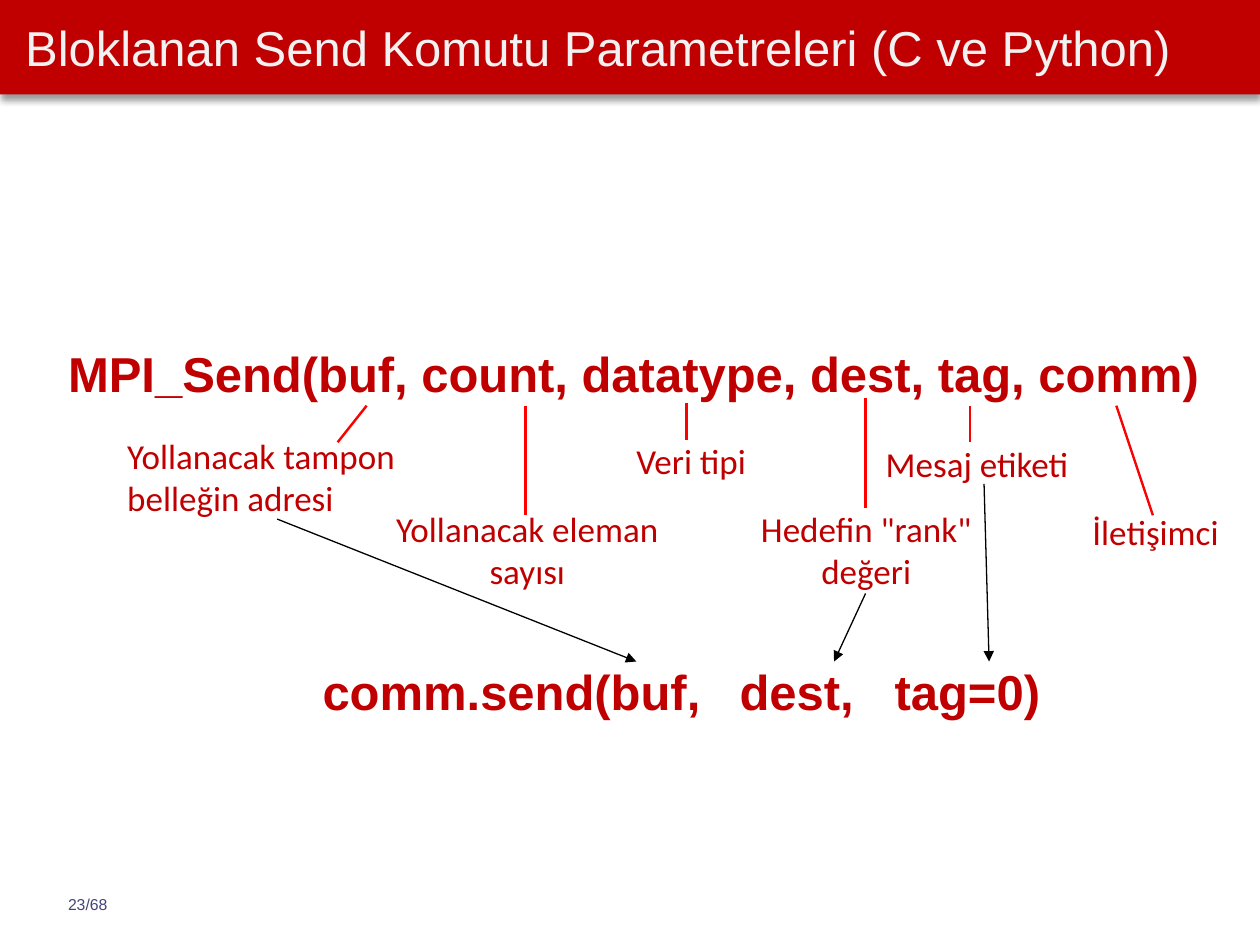
"""Build the slide on the parameters of the blocking send command."""
from dataclasses import dataclass

from lxml import etree
from pptx import Presentation
from pptx import util as u
from pptx.dml.color import RGBColor
from pptx.enum import shapes, text
from pptx.oxml import ns


@dataclass(frozen=True)
class Theme:
    """Colours, fonts and type sizes of the slide."""

    red: str = "C00000"
    pointer: str = "FF0000"
    arrow: str = "000000"
    title: str = "F2F2F2"
    page: str = "444479"
    sans: str = "Arial"
    label: str = "Calibri"
    code_size: float = 28
    label_size: float = 20
    page_size: float = 9


THEME = Theme()
LEFT, CENTER = text.PP_ALIGN.LEFT, text.PP_ALIGN.CENTER

LABELS = [
    ("Yollanacak tampon\vbelleğin adresi", (1.01, 3.45, 2.39, 0.67), LEFT),
    ("Yollanacak eleman\vsayısı", (3, 4.03, 2.37, 0.67), CENTER),
    ("Veri tipi", (5.05, 3.49, 0.94, 0.34), LEFT),
    ('Hedefin "rank"\vdeğeri', (5.98, 4.03, 1.79, 0.67), CENTER),
    ("Mesaj etiketi", (7.03, 3.51, 1.56, 0.34), LEFT),
    ("İletişimci", (8.67, 4.05, 1.08, 0.34), LEFT),
]
POINTERS = [
    (2.91, 3.22, 2.68, 3.51),
    (4.17, 3.22, 4.17, 4.09),
    (5.45, 3.2, 5.45, 3.49),
    (7.7, 3.22, 7.7, 3.51),
    (6.87, 3.16, 6.87, 4.03),
    (8.86, 3.22, 9.15, 4.09),
]
ARROWS = [
    (2.2, 4.12, 5.05, 5.25),
    (6.87, 4.71, 6.62, 5.25),
    (7.81, 3.84, 7.85, 5.25),
]


def add_child(parent, tag, **attributes):
    """Append a DrawingML element with the given attributes."""
    child = etree.SubElement(parent, ns.qn(tag))
    for key, value in attributes.items():
        child.set(key, str(value))
    return child


def write(frame, wording, font, size, color, bold=False, align=LEFT):
    """Fill a text frame with one formatted paragraph."""
    frame.word_wrap = True
    frame.auto_size = text.MSO_AUTO_SIZE.NONE
    frame.margin_left = frame.margin_right = 0
    frame.margin_top = frame.margin_bottom = 0
    paragraph = frame.paragraphs[0]
    paragraph.text = wording
    paragraph.alignment = align
    paragraph.font.name = font
    paragraph.font.size = u.Pt(size)
    paragraph.font.bold = bold
    paragraph.font.color.rgb = RGBColor.from_string(color)
    return paragraph


def add_text(slide, wording, place, *style, **options):
    """Add a text box and return its paragraph."""
    box = slide.shapes.add_textbox(*map(u.Inches, place))
    return write(box.text_frame, wording, *style, **options)


def add_code(slide, wording, place, tab_stops=()):
    """Add a bold line of code with optional tab stops."""
    paragraph = add_text(slide, wording, place, THEME.sans, THEME.code_size,
                         THEME.red, bold=True)
    if tab_stops:
        stops = etree.Element(ns.qn("a:tabLst"))
        for stop in tab_stops:
            add_child(stops, "a:tab", pos=u.Inches(stop), algn="l")
        paragraph._p.get_or_add_pPr().insert(0, stops)


def add_line(slide, ends, color, width, arrowhead=False):
    """Draw a straight line, with a triangle at its end if asked."""
    line = slide.shapes.add_connector(shapes.MSO_CONNECTOR.STRAIGHT,
                                      *map(u.Inches, ends))
    line.line.color.rgb = RGBColor.from_string(color)
    line.line.width = u.Pt(width)
    properties = line._element.spPr
    if arrowhead:
        add_child(properties.find(ns.qn("a:ln")), "a:tailEnd", type="triangle")
    add_child(properties, "a:effectLst")


def set_title(slide, wording):
    """Turn the title placeholder into a shadowed banner."""
    banner = slide.shapes.title
    banner.left, banner.top = 0, 0
    banner.width, banner.height = u.Inches(10), u.Inches(0.75)
    banner.fill.solid()
    banner.fill.fore_color.rgb = RGBColor.from_string(THEME.red)
    effects = add_child(banner._element.spPr, "a:effectLst")
    shadow = add_child(effects, "a:outerShdw", blurRad=u.Pt(4), dist=u.Pt(3),
                       dir=90 * 60000, rotWithShape=0)
    shade = add_child(shadow, "a:srgbClr", val=THEME.arrow)
    add_child(shade, "a:alpha", val=40000)
    write(banner.text_frame, wording, THEME.sans, THEME.code_size, THEME.title)
    banner.text_frame.margin_left = u.Inches(0.2)
    banner.text_frame.vertical_anchor = text.MSO_ANCHOR.MIDDLE


def main():
    """Build and save the slide."""
    deck = Presentation()
    deck.slide_width, deck.slide_height = u.Inches(10), u.Inches(7.5)
    slide = deck.slides.add_slide(deck.slide_layouts.get_by_name("Title Only"))
    set_title(slide, "Bloklanan Send Komutu Parametreleri (C ve Python)")
    add_text(slide, "23/68", (0.54, 7.1, 0.63, 0.15),
             THEME.sans, THEME.page_size, THEME.page)
    add_code(slide, "MPI_Send(buf, count, datatype, dest, tag, comm)",
             (0.54, 2.73, 9.09, 0.47))
    for wording, place, align in LABELS:
        add_text(slide, wording, place, THEME.label, THEME.label_size,
                 THEME.red, align=align)
    for ends in POINTERS:
        add_line(slide, ends, THEME.pointer, 1.38)
    add_code(slide, "comm.send(buf,\tdest,\ttag=0)",
             (2.56, 5.25, 5.78, 0.47), tab_stops=(3.31, 4.54))
    for ends in ARROWS:
        add_line(slide, ends, THEME.arrow, 0.75, arrowhead=True)
    deck.save("out.pptx")


if __name__ == "__main__":
    main()
